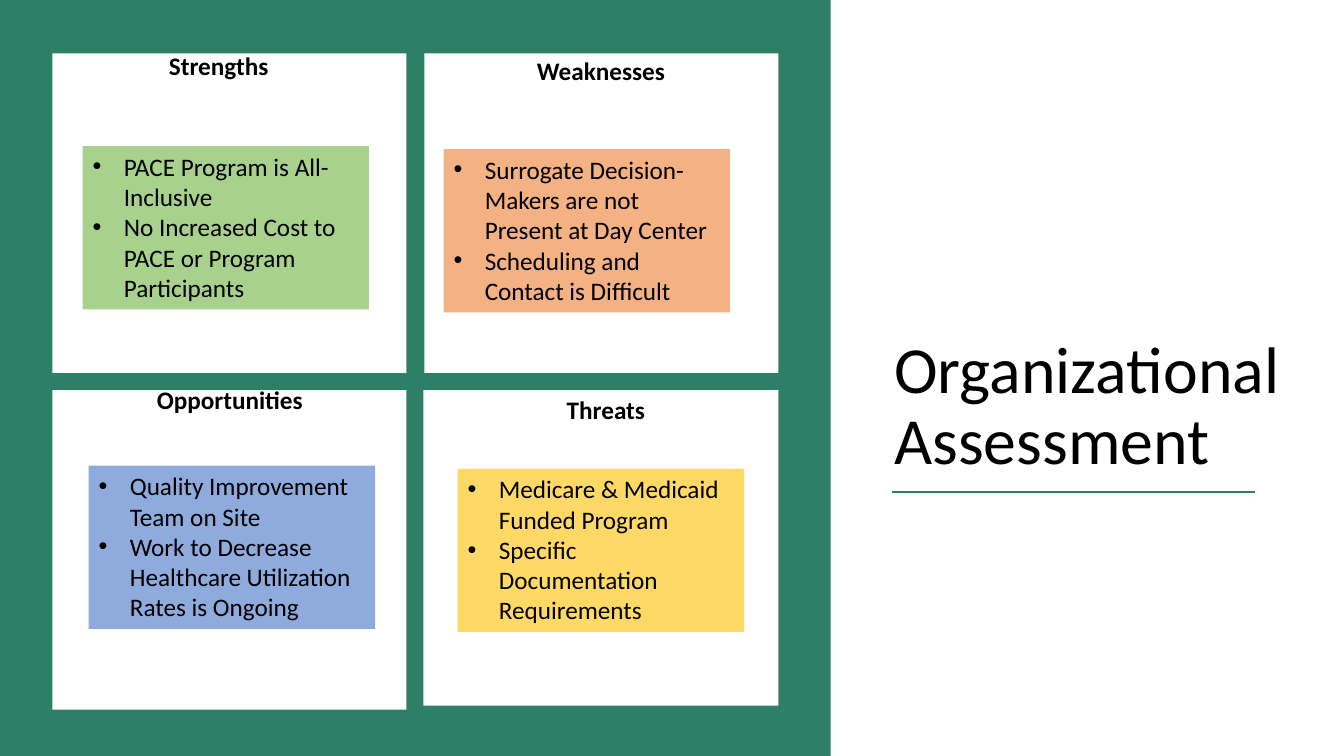
from lxml import etree
from pptx import Presentation
from pptx.dml.color import RGBColor
from pptx.enum import shapes, text
from pptx.oxml.ns import qn
from pptx.util import Inches, Pt

GREEN = RGBColor(0x2D, 0x7F, 0x66)
WHITE = RGBColor(0xFF, 0xFF, 0xFF)
BLACK = RGBColor(0, 0, 0)
LIME = RGBColor(0xA9, 0xD1, 0x8E)
PEACH = RGBColor(0xF4, 0xB1, 0x83)
BLUE = RGBColor(0x8F, 0xAA, 0xDC)
GOLD = RGBColor(0xFF, 0xD9, 0x66)

# Panel box, heading position, note position, note colour, heading, bullets
PARTS = [
    ((0.52, 0.53, 3.51, 3.17), (0.89, 0.45), (0.82, 1.45), LIME, "Strengths",
     ["PACE Program is All-Inclusive",
      "No Increased Cost to PACE or Program Participants"]),
    ((4.21, 0.53, 3.51, 3.17), (4.68, 0.5), (4.4, 1.48), PEACH, "Weaknesses",
     ["Surrogate Decision-Makers are not Present at Day Center",
      "Scheduling and Contact is Difficult"]),
    ((0.52, 3.87, 3.51, 3.17), (1, 3.76), (0.88, 4.62), BLUE, "Opportunities",
     ["Quality Improvement Team on Site",
      "Work to Decrease Healthcare Utilization Rates is Ongoing"]),
    ((4.2, 3.87, 3.52, 3.13), (4.73, 3.86), (4.54, 4.65), GOLD, "Threats",
     ["Medicare & Medicaid Funded Program",
      "Specific Documentation Requirements"]),
]


def add_rect(box, color):
    rect = slide.shapes.add_shape(shapes.MSO_SHAPE.RECTANGLE, *map(Inches, box))
    rect.shadow.inherit = False
    rect.fill.solid()
    rect.fill.fore_color.rgb = color
    rect.line.fill.background()
    return rect


def set_font(para, size, bold=False):
    para.font.name = "Calibri"
    para.font.size = Pt(size)
    para.font.bold = bold
    para.font.color.rgb = BLACK


deck = Presentation()
deck.slide_width, deck.slide_height = Inches(13.33), Inches(7.5)
slide = deck.slides.add_slide(deck.slide_layouts[5])

title = slide.shapes.title
title.left, title.top, title.width, title.height = map(Inches, (8.77, 0.53, 4.05, 4.27))
frame = title.text_frame
frame.text = "Organizational Assessment"
frame.word_wrap = True
frame.auto_size = text.MSO_AUTO_SIZE.NONE
frame.vertical_anchor = text.MSO_ANCHOR.BOTTOM
para = frame.paragraphs[0]
para.alignment = text.PP_ALIGN.LEFT
para.line_spacing = 0.9
set_font(para, 47)

add_rect((0, 0, 8.24, 7.5), GREEN)
rule = slide.shapes.add_connector(
    shapes.MSO_CONNECTOR.STRAIGHT, *map(Inches, (8.85, 4.88, 12.45, 4.88)))
rule.line.color.rgb = GREEN
rule.line.width = Pt(1.5)
etree.SubElement(rule._element.spPr, qn("a:effectLst"))

for panel, head_at, note_at, color, name, items in PARTS:
    add_rect(panel, WHITE)

    head = slide.shapes.add_textbox(*map(Inches, (*head_at, 2.56, 0.4)))
    head.text_frame.word_wrap = True
    head.text_frame.text = name
    para = head.text_frame.paragraphs[0]
    para.alignment = text.PP_ALIGN.CENTER
    set_font(para, 18, True)

    note = add_rect((*note_at, 2.84, 1.62), color)
    frame = note.text_frame
    frame.word_wrap = True
    frame.vertical_anchor = text.MSO_ANCHOR.TOP
    frame.text = "\n".join(items)
    for para in frame.paragraphs:
        para.alignment = text.PP_ALIGN.LEFT
        set_font(para, 18)
        props = para._p.get_or_add_pPr()
        props.set("marL", str(Inches(0.31)))
        props.set("indent", str(Inches(-0.31)))
        font = etree.Element(qn("a:buFont"), typeface="Arial")
        mark = etree.Element(qn("a:buChar"), char="•")
        props.insert(0, font)
        props.insert(1, mark)

deck.save("out.pptx")
